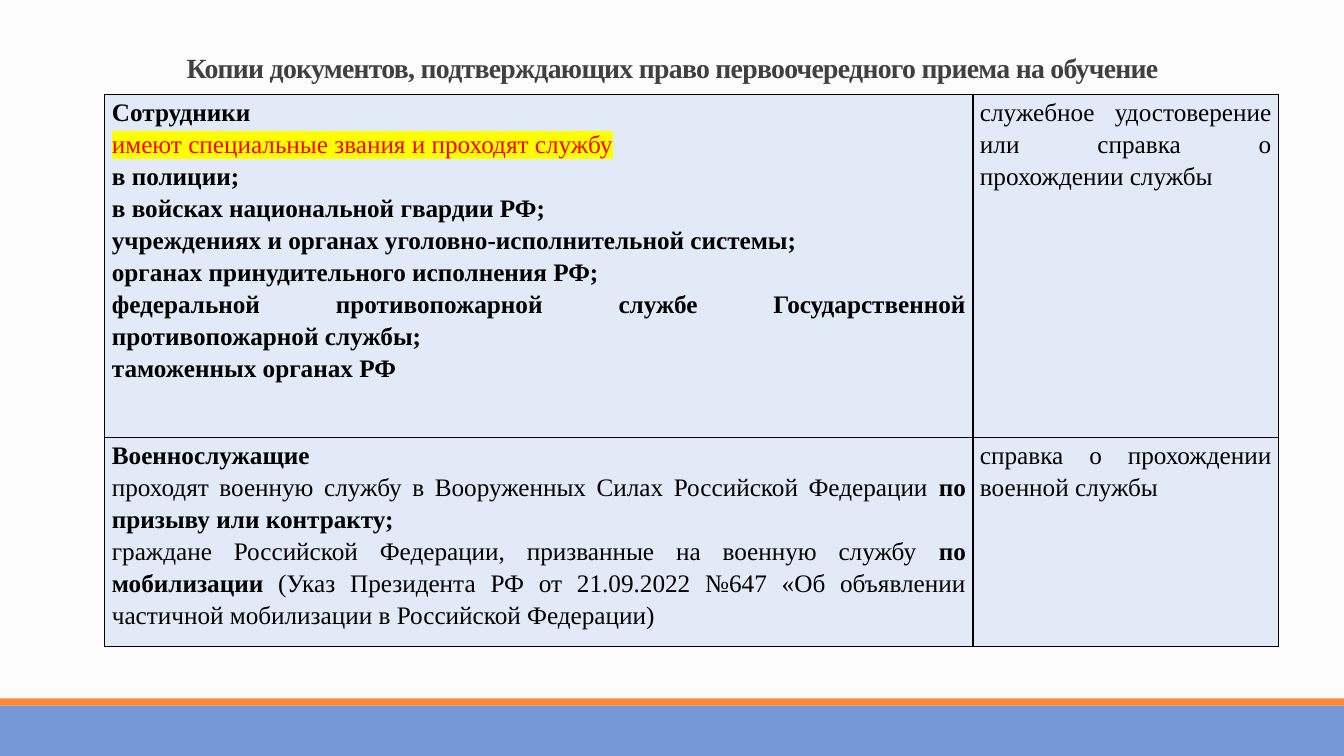
from lxml.etree import SubElement, Element
from pptx import Presentation
from pptx.dml.color import RGBColor
from pptx.enum.shapes import MSO_SHAPE as Shape
from pptx.enum.text import MSO_ANCHOR as Anchor, PP_ALIGN as Align
from pptx.oxml.ns import qn
from pptx.util import Inches, Pt


def paint(fill, color):
    fill.solid()
    fill.fore_color.rgb = RGBColor.from_string(color)


def style(para, size, color, align):
    """Set the font, line spacing and alignment of a paragraph."""
    para.alignment = align
    para.line_spacing = 1.15
    para.font.name = "Times New Roman"
    para.font.size = Pt(size)
    paint(para.font.fill, color)


deck = Presentation()
deck.slide_width, deck.slide_height = Inches(13.33), Inches(7.5)
slide = deck.slides.add_slide(deck.slide_layouts[6])
paint(slide.background.fill, "FCFCFC")

# Footer bands
for top, height, color in [(7, 0.5, "7598D9"), (6.93, 0.07, "FE8637")]:
    band = slide.shapes.add_shape(
        Shape.RECTANGLE, 0, Inches(top), deck.slide_width, Inches(height))
    band.shadow.inherit = False
    band.line.fill.background()
    paint(band.fill, color)

# Title
title = slide.shapes.add_textbox(
    Inches(1.34), Inches(0.35), Inches(10.65), Inches(0.53)).text_frame
title.word_wrap = True
title.vertical_anchor = Anchor.BOTTOM
para = title.paragraphs[0]
run = para.add_run()
run.text = "Копии документов, подтверждающих право первоочередного приема на обучение"
style(para, 19.8, "404040", Align.CENTER)
para.font.bold = True
run.font._element.set("spc", "-50")

# Each cell is a list of paragraphs, each paragraph a list of (text, mark) runs:
# "b" is bold, "h" is highlighted, "" is plain
rows = [
    [
        [
            [("Сотрудники", "b")],
            [("имеют специальные звания и проходят службу", "h")],
            [("в полиции;", "b")],
            [("в войсках национальной гвардии РФ;", "b")],
            [("учреждениях и органах уголовно-исполнительной системы;", "b")],
            [("органах принудительного исполнения РФ;", "b")],
            [("федеральной противопожарной службе Государственной "
              "противопожарной службы;", "b")],
            [("таможенных органах РФ", "b")],
        ],
        [[("служебное удостоверение или справка о прохождении службы", "")]],
    ],
    [
        [
            [("Военнослужащие", "b")],
            [("проходят военную службу в Вооруженных Силах Российской Федерации ", ""),
             ("по призыву или контракту;", "b")],
            [("граждане Российской Федерации, призванные на военную службу ", ""),
             ("по мобилизации", "b"),
             (" (Указ Президента РФ от 21.09.2022 №647 «Об объявлении частичной "
              "мобилизации в Российской Федерации)", "")],
        ],
        [[("справка о прохождении военной службы", "")]],
    ],
]
widths, heights = [8.61, 3.03], [3.4, 2.04]

table = slide.shapes.add_table(
    len(rows), len(widths), Inches(1.04), Inches(0.94),
    Inches(sum(widths)), Inches(sum(heights))).table
for col, width in zip(table.columns, widths):
    col.width = Inches(width)
for row, height in zip(table.rows, heights):
    row.height = Inches(height)

for r, row in enumerate(rows):
    for c, paras in enumerate(row):
        cell = table.cell(r, c)
        cell.margin_left = cell.margin_right = Inches(0.07)
        cell.margin_top = cell.margin_bottom = 0
        paint(cell.fill, "E3EAF7")
        props = cell._tc.get_or_add_tcPr()
        for i, side in enumerate(["lnL", "lnR", "lnT", "lnB"]):
            edge = Element(qn(f"a:{side}"), w=str(Pt(1)))
            ink = SubElement(edge, qn("a:solidFill"))
            SubElement(ink, qn("a:srgbClr"), val="000000")
            props.insert(i, edge)

        frame = cell.text_frame
        for n, runs in enumerate(paras):
            para = frame.add_paragraph() if n else frame.paragraphs[0]
            style(para, 18, "000000", Align.JUSTIFY)
            for text, mark in runs:
                run = para.add_run()
                run.text = text
                run.font.bold = mark == "b"
                if mark == "h":
                    paint(run.font.fill, "FF0000")
                    glow = SubElement(run.font._element, qn("a:highlight"))
                    SubElement(glow, qn("a:srgbClr"), val="FFFF00")

deck.save("out.pptx")
